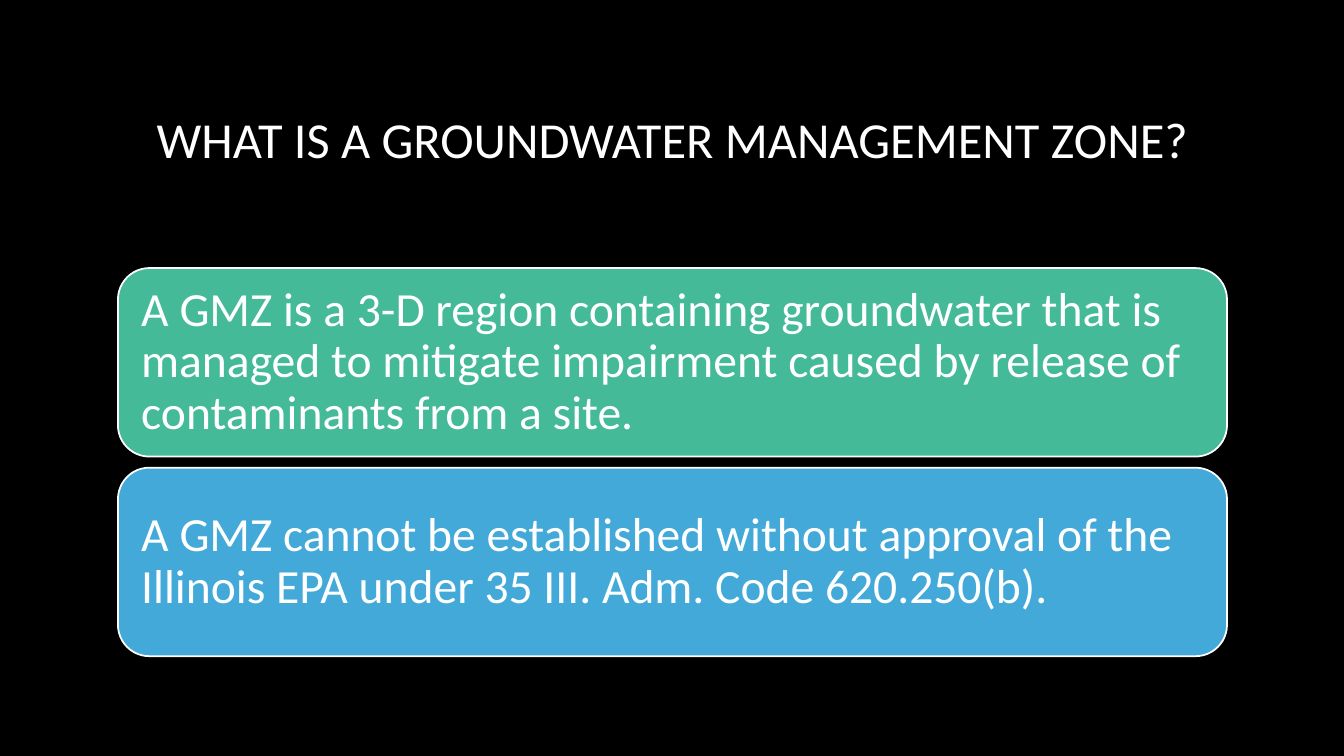
from dataclasses import dataclass

from pptx import Presentation
from pptx import util as u
from pptx.dml.color import RGBColor
from pptx.enum import shapes, text


@dataclass(frozen=True)
class Theme:
    background: RGBColor = RGBColor(0x00, 0x00, 0x00)
    foreground: RGBColor = RGBColor(0xFF, 0xFF, 0xFF)
    green: RGBColor = RGBColor(0x44, 0xBA, 0x98)
    blue: RGBColor = RGBColor(0x43, 0xA9, 0xD9)
    font: str = "Calibri"
    title_size: int = 36
    card_size: int = 34
    outline: float = 1.25


@dataclass(frozen=True)
class Card:
    wording: str
    fill: RGBColor


THEME = Theme()
LEFT, WIDTH = 1.17, 11
CARD_TOP, CARD_HEIGHT, CARD_PITCH = 2.66, 1.87, 1.98
CARD_INSET = 0.14

CARDS = [
    Card("A GMZ is a 3-D region containing groundwater that is managed to mitigate "
         "impairment caused by release of contaminants from a site.", THEME.green),
    Card("A GMZ cannot be established without approval of the Illinois EPA under "
         "35 III. Adm. Code 620.250(b).", THEME.blue),
]


def write(shape, wording: str, size: int, alignment) -> None:
    """Fill a shape with one vertically centred paragraph."""
    frame = shape.text_frame
    frame.word_wrap = True
    frame.vertical_anchor = text.MSO_ANCHOR.MIDDLE
    frame.text = wording
    paragraph = frame.paragraphs[0]
    paragraph.alignment = alignment
    paragraph.line_spacing = 0.9
    font = paragraph.runs[0].font
    font.name = THEME.font
    font.size = u.Pt(size)
    font.color.rgb = THEME.foreground


def draw_title(slide, wording: str) -> None:
    box = slide.shapes.add_textbox(
        u.Inches(LEFT), u.Inches(0.53), u.Inches(WIDTH), u.Inches(1.76))
    write(box, wording, THEME.title_size, text.PP_ALIGN.CENTER)


def draw_card(slide, card: Card, top: float) -> None:
    shape = slide.shapes.add_shape(
        shapes.MSO_SHAPE.ROUNDED_RECTANGLE,
        u.Inches(LEFT), u.Inches(top), u.Inches(WIDTH), u.Inches(CARD_HEIGHT))
    shape.shadow.inherit = False
    shape.fill.solid()
    shape.fill.fore_color.rgb = card.fill
    shape.line.color.rgb = THEME.foreground
    shape.line.width = u.Pt(THEME.outline)
    frame = shape.text_frame
    frame.margin_left = frame.margin_right = u.Inches(CARD_INSET)
    frame.margin_top = frame.margin_bottom = u.Inches(CARD_INSET)
    write(shape, card.wording, THEME.card_size, text.PP_ALIGN.LEFT)


def main() -> None:
    presentation = Presentation()
    presentation.slide_width = u.Inches(13.33)
    presentation.slide_height = u.Inches(7.5)
    slide = presentation.slides.add_slide(presentation.slide_layouts[6])

    # Background
    slide.background.fill.solid()
    slide.background.fill.fore_color.rgb = THEME.background

    # Title
    draw_title(slide, "WHAT IS A GROUNDWATER MANAGEMENT ZONE?")

    # Stacked statement cards
    for index, card in enumerate(CARDS):
        draw_card(slide, card, CARD_TOP + index * CARD_PITCH)

    presentation.save("out.pptx")


if __name__ == "__main__":
    main()
